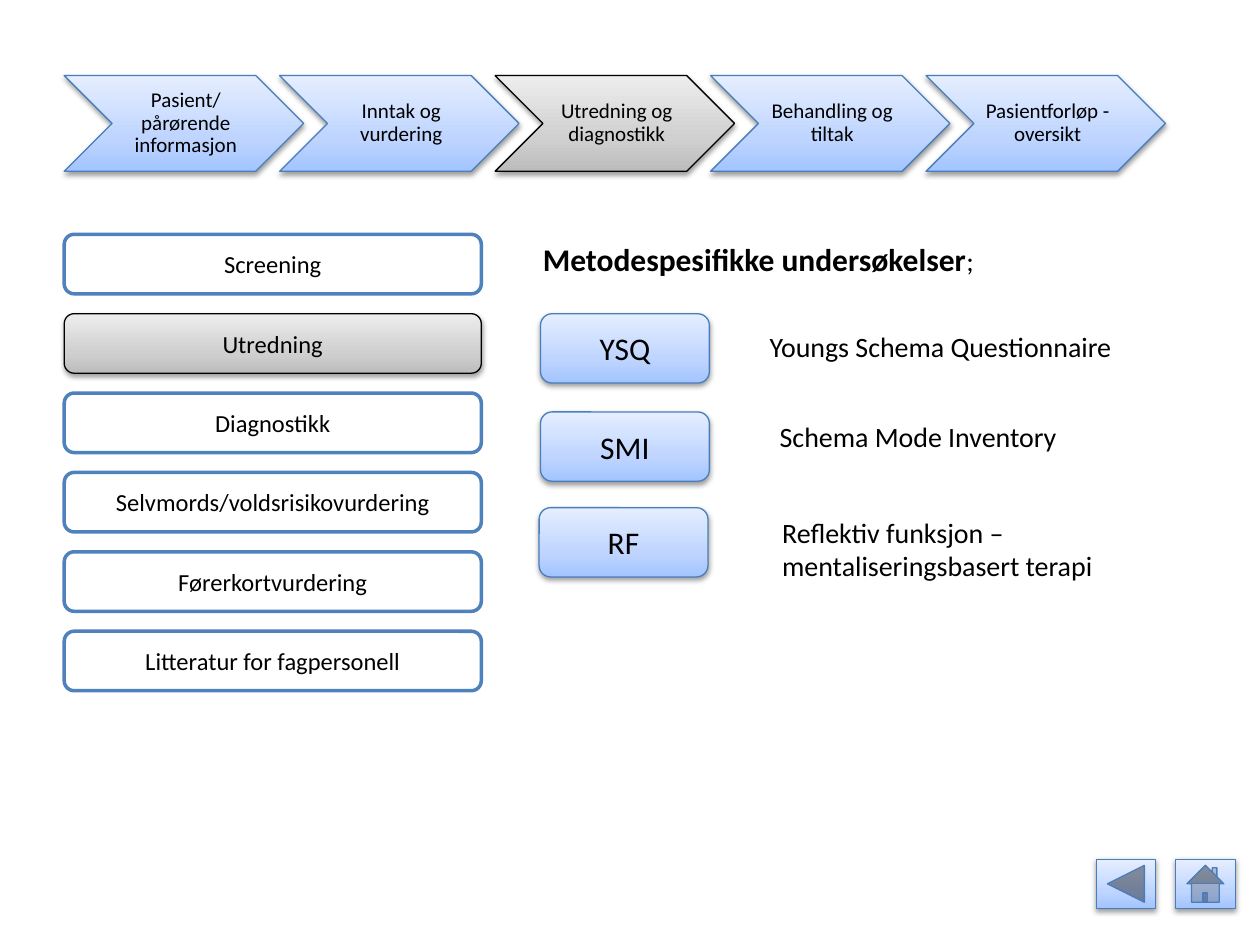
from pptx import Presentation
from pptx.dml.color import RGBColor
from pptx.enum.shapes import MSO_SHAPE
from pptx.enum.text import MSO_ANCHOR, PP_ALIGN
from pptx.oxml import parse_xml
from pptx.oxml.ns import nsdecls
from pptx.util import Pt

CHEVRON = MSO_SHAPE.CHEVRON
ROUND = MSO_SHAPE.ROUNDED_RECTANGLE
BACK = MSO_SHAPE.ACTION_BUTTON_BACK_OR_PREVIOUS
HOME = MSO_SHAPE.ACTION_BUTTON_HOME
MIDDLE, TOP = MSO_ANCHOR.MIDDLE, MSO_ANCHOR.TOP
CENTER, LEFT = PP_ALIGN.CENTER, PP_ALIGN.LEFT

COLORS = {"text": "000000", "white": "FFFFFF", "edge": "4F81BD"}
# Gradient stops run from bottom to top
STYLES = {
    "blue": {"line": "4A7EBB", "stops": ("A3C4FF", "BFD5FF", "E5EEFF")},
    "gray": {"line": "000000", "stops": ("BCBCBC", "D0D0D0", "EDEDED")},
}
STEPS = ["Pasient/ pårørende informasjon", "Inntak og vurdering",
         "Utredning og diagnostikk", "Behandling og tiltak",
         "Pasientforløp - oversikt"]
MENU = ["Screening", "Utredning", "Diagnostikk",
        "Selvmords/voldsrisikovurdering", "Førerkortvurdering",
        "Litteratur for fagpersonell"]
# Short name, full name, then offsets of button and label in the panel
TESTS = [
    ("YSQ", "Youngs Schema Questionnaire", (5.8, 45.4), (129.6, 51.1)),
    ("SMI", "Schema Mode Inventory", (5.8, 101.5), (135.4, 102.2)),
    ("RF", "Reflektiv funksjon – mentaliseringsbasert terapi",
     (5, 156.2), (136.8, 157)),
]


def rgb(code):
    return RGBColor.from_string(code)


def write(shape, runs, align=CENTER, anchor=MIDDLE, **para_format):
    """Fill one paragraph with (text, size, bold) runs."""
    frame = shape.text_frame
    frame.word_wrap = True
    frame.vertical_anchor = anchor
    para = frame.paragraphs[0]
    for key, value in {"alignment": align, **para_format}.items():
        setattr(para, key, value)
    for text, size, bold in runs:
        run = para.add_run()
        run.text = text
        run.font.color.rgb = rgb(COLORS["text"])
        for key, value in {"name": "Calibri", "size": Pt(size), "bold": bold}.items():
            setattr(run.font, key, value)


def add_label(slide, box, runs):
    label = slide.shapes.add_textbox(*map(Pt, box))
    write(label, runs, LEFT, TOP)


def add_plain(slide, box):
    shape = slide.shapes.add_shape(ROUND, *map(Pt, box))
    shape.shadow.inherit = False
    shape.fill.solid()
    shape.fill.fore_color.rgb = rgb(COLORS["white"])
    shape.line.color.rgb = rgb(COLORS["edge"])
    shape.line.width = Pt(2)
    return shape


def add_glossy(slide, kind, box, style="blue"):
    """Add a shape with a three-stop gradient and a soft shadow."""
    look = STYLES[style]
    shape = slide.shapes.add_shape(kind, *map(Pt, box))
    shape.shadow.inherit = False
    shape.line.color.rgb = rgb(look["line"])
    shape.line.width = Pt(0.75)
    shape.fill.gradient()
    shape.fill.gradient_angle = 90
    props = shape.element.spPr
    stops = "".join(
        f'<a:gs pos="{pos}"><a:srgbClr val="{code}"/></a:gs>'
        for pos, code in zip((0, 35000, 100000), look["stops"]))
    old = props.find(".//{*}gsLst")
    old.getparent().replace(
        old, parse_xml(f'<a:gsLst {nsdecls("a")}>{stops}</a:gsLst>'))
    props.find("{*}effectLst").append(parse_xml(
        f'<a:outerShdw {nsdecls("a")} blurRad="{Pt(3.1)}" dist="{Pt(1.6)}" '
        'dir="5400000" rotWithShape="0"><a:srgbClr val="000000">'
        '<a:alpha val="38000"/></a:srgbClr></a:outerShdw>'))
    return shape


def add_steps(slide, box, active):
    left, top, width, height = box
    wide = 136.8
    pitch = (width - wide) / (len(STEPS) - 1)
    margins = {"margin_left": 3.6, "margin_right": 1.4,
               "margin_top": 1.4, "margin_bottom": 1.4}
    for i, text in enumerate(STEPS):
        style = "gray" if i == active else "blue"
        step = add_glossy(slide, CHEVRON, (left + i * pitch, top, wide, height), style)
        for key, value in margins.items():
            setattr(step.text_frame, key, Pt(value))
        write(step, [(text, 12, False)], line_spacing=0.9)


def add_menu(slide, box, active):
    left, top, width, height = box
    tall = 34
    pitch = (height - tall) / (len(MENU) - 1)
    for i, text in enumerate(MENU):
        place = (left, top + i * pitch, width, tall)
        if i == active:
            item = add_glossy(slide, ROUND, place, "gray")
        else:
            item = add_plain(slide, place)
        write(item, [(text, 14, False)])


def add_tests(slide, box):
    left, top, width, _ = box
    add_label(slide, (left, top, width, 30),
              [("Metodespesifikke undersøkelser", 18, True), (";", 16, False)])
    for short, full, (bx, by), (tx, ty) in TESTS:
        button = add_glossy(slide, ROUND, (left + bx, top + by, 96.5, 39.6))
        write(button, [(short, 18, False)])
        add_label(slide, (left + tx, top + ty, 233.3, 26.6), [(full, 16, False)])


def add_nav(slide, box):
    left, top, width, height = box
    wide = 34
    for kind, x in ((BACK, left), (HOME, left + width - wide)):
        add_glossy(slide, kind, (x, top, wide, height))


def main():
    deck = Presentation()
    deck.slide_width, deck.slide_height = Pt(720), Pt(540)
    slide = deck.slides.add_slide(deck.slide_layouts[6])
    add_steps(slide, (36.7, 43.2, 629.3, 54.7), active=2)
    add_menu(slide, (36.7, 133.9, 238.3, 260.8), active=1)
    add_tests(slide, (303.1, 133.9, 396.7, 203))
    add_nav(slide, (626.4, 491, 79.4, 28.1))
    deck.save("out.pptx")


if __name__ == "__main__":
    main()
